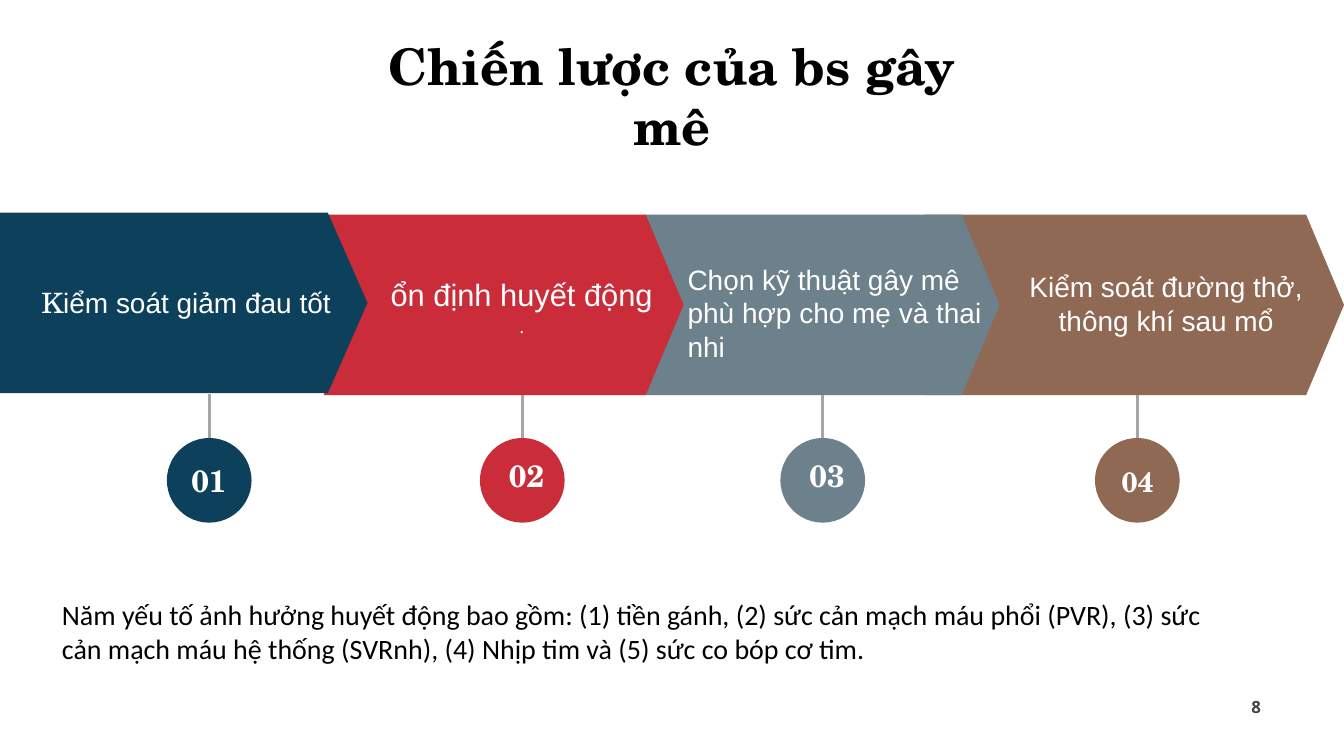
from lxml import etree
from pptx import Presentation
from pptx.dml.color import RGBColor
from pptx.enum.shapes import MSO_CONNECTOR, MSO_SHAPE
from pptx.enum.text import MSO_ANCHOR, MSO_AUTO_SIZE, PP_ALIGN
from pptx.oxml.ns import qn
from pptx.util import Inches, Pt

STRAIGHT = MSO_CONNECTOR.STRAIGHT
CHEVRON, PENTAGON, OVAL = MSO_SHAPE.CHEVRON, MSO_SHAPE.PENTAGON, MSO_SHAPE.OVAL
LEFT, CENTER, RIGHT = PP_ALIGN.LEFT, PP_ALIGN.CENTER, PP_ALIGN.RIGHT
TOP, MIDDLE = MSO_ANCHOR.TOP, MSO_ANCHOR.MIDDLE
FIT_SHAPE = MSO_AUTO_SIZE.SHAPE_TO_FIT_TEXT

SERIF, SANS, BODY, SMALL = "TeX Gyre Schola", "Arial", "Calibri", "Noto Sans"
WHITE, BLACK, GREY, DARK = "FFFFFF", "000000", "A6A6A6", "424242"
NAVY, RED, SLATE, BROWN = "0D415B", "CA2C3A", "6C818B", "906955"

BAND_HEIGHT = 3.58
CIRCLE_TOP, CIRCLE_SIZE = 8.69, 1.68

# kind, left, top, width, adjustment, colour, circle centre
STEPS = [
    (PENTAGON, 0, 4.22, 7.29, 0.22, NAVY, 4.15),
    (CHEVRON, 6.42, 4.26, 7.14, 0.21, RED, 10.36),
    (CHEVRON, 12.79, 4.26, 7.04, 0.21, SLATE, 16.32),
    (CHEVRON, 18.34, 4.26, 8.32, 0.21, BROWN, 22.56),
]

# left, top, width, height, alignment, line spacing, runs
CAPTIONS = [
    (0.53, 5.62, 6.32, 0.77, CENTER, None,
     [("K", 40, SERIF), ("iểm soát giảm đau tốt", 40, SANS)]),
    (7.59, 5.67, 5.52, 1.08, CENTER, 35,
     [("ổn định huyết động ", 44, SANS), (".", 24, SMALL)]),
    (13.54, 5.15, 6.24, 2.12, LEFT, None,
     [("Chọn kỹ thuật gây mê phù hợp cho mẹ và thai nhi", 40, SANS)]),
    (19.88, 5.3, 6.5, 1.45, CENTER, None,
     [("Kiểm soát đường thở, thông khí sau mổ", 40, SANS)]),
]

# text, left, top, width, height, size
NUMBERS = [
    ("01", 3.69, 9.11, 0.91, 0.84, 44),
    ("02", 9.99, 9, 0.91, 0.84, 44),
    ("03", 15.95, 9, 0.91, 0.84, 44),
    ("04", 22.14, 9.17, 0.85, 0.77, 40),
]


def rgb(color):
    return RGBColor.from_string(color)


def add_shape(s, kind, left, top, width, height, color, adj=None):
    sp = s.shapes.add_shape(kind, Inches(left), Inches(top), Inches(width), Inches(height))
    sp.shadow.inherit = False
    sp.fill.solid()
    sp.fill.fore_color.rgb = rgb(color)
    sp.line.fill.background()
    if adj is not None:
        sp.adjustments[0] = adj


def add_stem(s, x, top, bottom):
    line = s.shapes.add_connector(STRAIGHT, Inches(x), Inches(bottom), Inches(x), Inches(top))
    line.line.color.rgb = rgb(GREY)
    line.line.width = Pt(4)
    etree.SubElement(line._element.spPr, qn("a:effectLst"))


def add_text(s, left, top, width, height, runs, color, align=LEFT,
             bold=False, wrap=True, anchor=TOP, spacing=None):
    sp = s.shapes.add_textbox(Inches(left), Inches(top), Inches(width), Inches(height))
    tf = sp.text_frame
    tf.word_wrap = wrap
    tf.auto_size = FIT_SHAPE
    tf.vertical_anchor = anchor
    p = tf.paragraphs[0]
    p.alignment = align
    if spacing:
        p.line_spacing = Pt(spacing)
    for text, size, font in runs:
        r = p.add_run()
        r.text = text
        r.font.size = Pt(size)
        r.font.name = font
        r.font.bold = bold
        r.font.color.rgb = rgb(color)


def main():
    prs = Presentation()
    prs.slide_width, prs.slide_height = Inches(26.66), Inches(15)
    s = prs.slides.add_slide(prs.slide_layouts[6])

    add_text(s, 24.46, 13.77, 0.65, 0.5, [("8", 24, SMALL)], DARK, RIGHT, bold=True, wrap=False)
    add_text(s, 7.35, 0.64, 11.96, 1.31, [("Chiến lược của bs gây mê", 72, SERIF)],
             BLACK, CENTER, bold=True)

    for *_, x in STEPS:
        add_stem(s, x, 7.81, 8.77)
    for kind, left, top, width, adj, color, _ in reversed(STEPS):
        add_shape(s, kind, left, top, width, BAND_HEIGHT, color, adj)
    for *_, color, x in STEPS:
        add_shape(s, OVAL, x - CIRCLE_SIZE / 2, CIRCLE_TOP, CIRCLE_SIZE, CIRCLE_SIZE, color)

    for text, left, top, width, height, size in NUMBERS:
        add_text(s, left, top, width, height, [(text, size, SERIF)], WHITE, CENTER,
                 bold=True, wrap=False, anchor=MIDDLE)
    for left, top, width, height, align, spacing, runs in CAPTIONS:
        add_text(s, left, top, width, height, runs, WHITE, align, spacing=spacing)

    note = ("Năm yếu tố ảnh hưởng huyết động bao gồm: (1) tiền gánh, "
            "(2) sức cản mạch máu phổi (PVR), (3) sức cản mạch máu hệ thống (SVRnh), "
            "(4) Nhịp tim và (5) sức co bóp cơ tim.")
    add_text(s, 1.13, 11.81, 22.98, 1.45, [(note, 40, BODY)], BLACK)

    prs.save("out.pptx")


if __name__ == "__main__":
    main()
